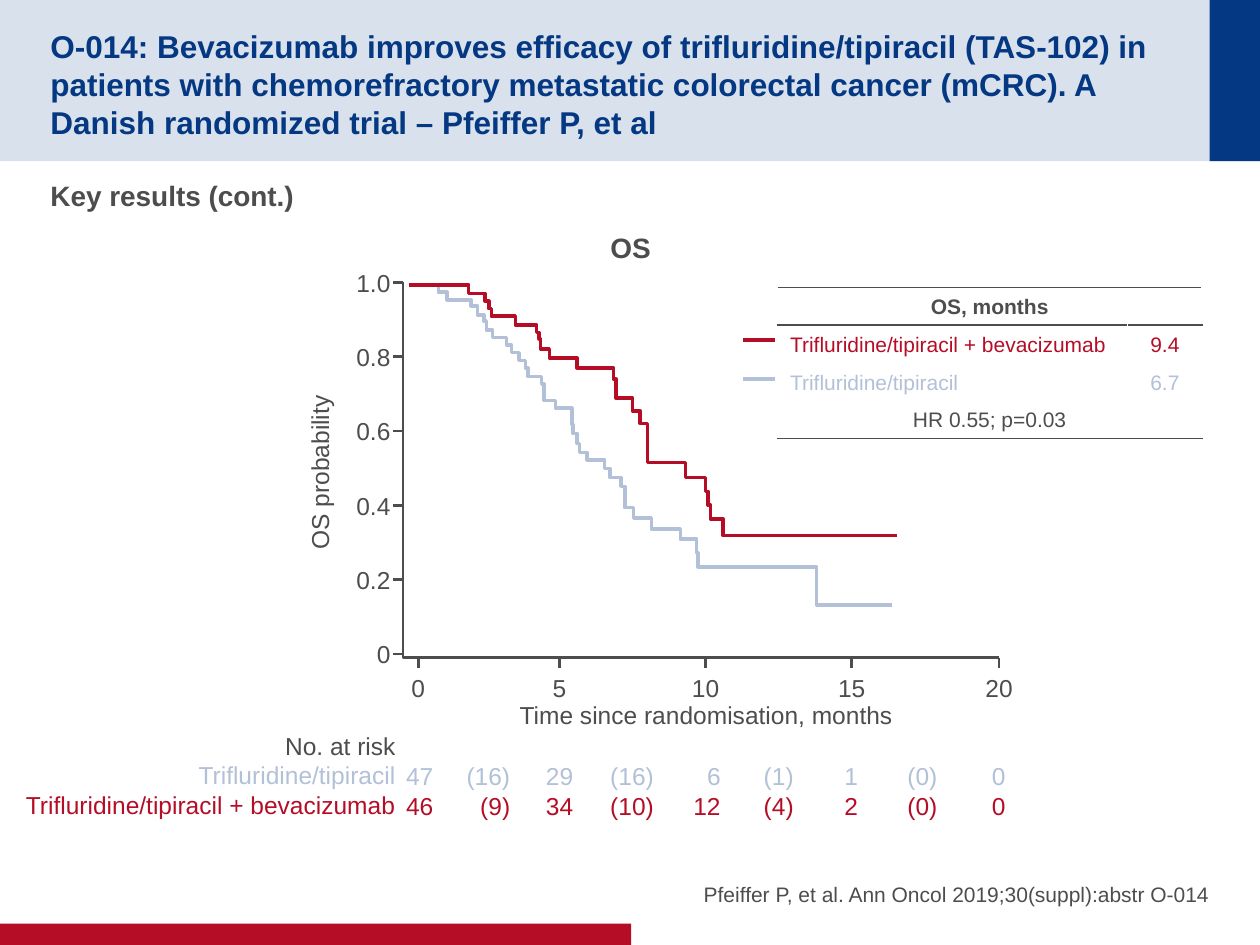
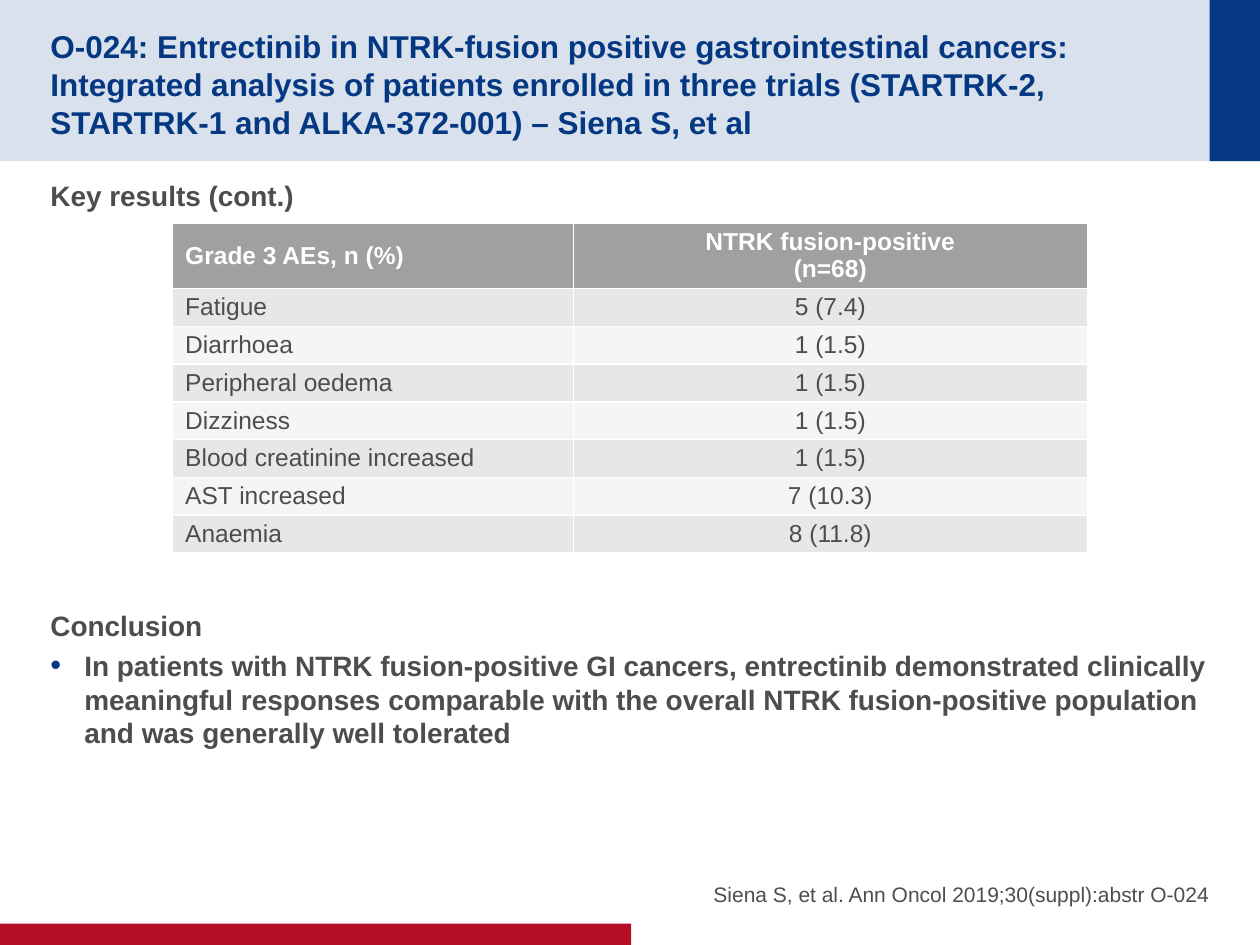
"""Build two oncology result slides: a survival plot and an adverse-event table."""
from pptx import Presentation, util as u
from pptx.dml.color import RGBColor
from pptx.enum import shapes, text
from pptx.oxml.xmlchemy import OxmlElement

NAVY = RGBColor(0x04, 0x38, 0x82)
PALE_NAVY = RGBColor(0xD9, 0xE1, 0xEC)
RED = RGBColor(0xB6, 0x0D, 0x27)
STEEL = RGBColor(0xB2, 0xC0, 0xD8)
INK = RGBColor(0x4D, 0x4D, 0x4D)
WHITE = RGBColor(0xFF, 0xFF, 0xFF)
GREY = RGBColor(0xA0, 0xA0, 0xA0)
GREY_DARK_ROW = RGBColor(0xE7, 0xE7, 0xE7)
GREY_LIGHT_ROW = RGBColor(0xF5, 0xF5, 0xF5)
FONT = "Arial"
LEFT, CENTER, RIGHT = text.PP_ALIGN.LEFT, text.PP_ALIGN.CENTER, text.PP_ALIGN.RIGHT
TOP, MIDDLE, BOTTOM = text.MSO_ANCHOR.TOP, text.MSO_ANCHOR.MIDDLE, text.MSO_ANCHOR.BOTTOM

WIDTH, HEIGHT = 10, 7.5
BANDS = [
    (0, 0, WIDTH, 1.28, PALE_NAVY),
    (9.6, 0, 0.4, 1.28, NAVY),
    (0, 7.33, 5.01, 0.17, RED),
]

SURVIVAL = {
    "title": "O-014: Bevacizumab improves efficacy of trifluridine/tipiracil (TAS-102) in patients "
             "with chemorefractory metastatic colorectal cancer (mCRC). A Danish randomized trial "
             "– Pfeiffer P, et al",
    "body": [("Key results (cont.)", 0, False)],
    "citation": "Pfeiffer P, et al. Ann Oncol 2019;30(suppl):abstr O-014",
}
ADVERSE_EVENTS = {
    "title": "O-024: Entrectinib in NTRK-fusion positive gastrointestinal cancers: Integrated "
             "analysis of patients enrolled in three trials (STARTRK-2, STARTRK-1 and "
             "ALKA-372-001) – Siena S, et al",
    "body": [
        ("Key results (cont.)", 0, False),
        ("Conclusion", 222, False),
        ("In patients with NTRK fusion-positive GI cancers, entrectinib demonstrated clinically "
         "meaningful responses comparable with the overall NTRK fusion-positive population and "
         "was generally well tolerated", 0, True),
    ],
    "citation": "Siena S, et al. Ann Oncol 2019;30(suppl):abstr O-024",
}

COMBINATION, SINGLE = "Trifluridine/tipiracil + bevacizumab", "Trifluridine/tipiracil"
PROBABILITIES = ["1.0", "0.8", "0.6", "0.4", "0.2", "0"]
PROBABILITY_TOP, PROBABILITY_STEP = 2.24, 0.59
MONTHS = [("0", 3.32), ("5", 4.44), ("10", 5.6), ("15", 6.76), ("20", 7.93)]
AXIS_LEFT, AXIS_BOTTOM, AXIS_RIGHT, TICK = 3.2, 5.22, 7.93, 0.08
AT_RISK = [
    (3.44, "47", "46"), (4.05, "(16)", "(9)"), (4.55, "29", "34"),
    (5.19, "(16)", "(10)"), (5.72, "6", "12"), (6.3, "(1)", "(4)"),
    (6.81, "1", "2"), (7.44, "(0)", "(0)"), (7.98, "0", "0"),
]

CURVE_START = (3.25, 2.26)
SINGLE_DROPS = [
    (3.48, 2.32), (3.55, 2.38), (3.74, 2.43), (3.79, 2.5), (3.84, 2.55), (3.86, 2.62),
    (3.91, 2.68), (4.02, 2.74), (4.06, 2.8), (4.12, 2.86), (4.17, 2.92), (4.19, 2.99),
    (4.3, 3.05), (4.32, 3.18), (4.41, 3.24), (4.54, 3.37), (4.55, 3.44), (4.58, 3.52),
    (4.6, 3.59), (4.66, 3.65), (4.8, 3.72), (4.84, 3.79), (4.93, 3.86), (4.96, 4.03),
    (5.03, 4.11), (5.17, 4.2), (5.4, 4.28), (5.53, 4.39), (5.54, 4.5), (6.48, 4.8),
]
COMBINATION_DROPS = [
    (3.72, 2.33), (3.85, 2.39), (3.88, 2.45), (3.9, 2.51), (4.09, 2.58), (4.26, 2.64),
    (4.28, 2.69), (4.29, 2.77), (4.36, 2.84), (4.58, 2.92), (4.87, 3.01), (4.89, 3.16),
    (5.02, 3.26), (5.08, 3.36), (5.14, 3.67), (5.44, 3.79), (5.6, 3.9), (5.62, 4.01),
    (5.64, 4.12), (5.74, 4.25),
]
CURVES = [(SINGLE_DROPS, 7.08, STEEL), (COMBINATION_DROPS, 7.12, RED)]
LEGEND = [(2.7, RED), (3.01, STEEL)]

MEDIANS = [
    (["OS, months"], INK, True),
    ([COMBINATION, "9.4"], RED, False),
    ([SINGLE, "6.7"], STEEL, False),
    (["HR 0.55; p=0.03"], INK, False),
]
MEDIAN_RULES = {0, 1, 4}

EVENTS = [
    ("Grade 3 AEs, n (%)", "NTRK fusion-positive\n(n=68)"),
    ("Fatigue", "5 (7.4)"),
    ("Diarrhoea", "1 (1.5)"),
    ("Peripheral oedema", "1 (1.5)"),
    ("Dizziness", "1 (1.5)"),
    ("Blood creatinine increased", "1 (1.5)"),
    ("AST increased", "7 (10.3)"),
    ("Anaemia", "8 (11.8)"),
]


def inches(*lengths):
    return [u.Inches(length) for length in lengths]


def style(para, size, color, bold=False, align=LEFT, pitch=1.2):
    para.alignment = align
    para.line_spacing = u.Pt(round(size * pitch, 1))
    para.space_before = u.Pt(0)
    for span in para.runs:
        span.font.name, span.font.size, span.font.bold = FONT, u.Pt(size), bold
        span.font.color.rgb = color


def set_bullet(para, shown):
    props = para._p.get_or_add_pPr()
    props.set("marL", str(u.Inches(0.27 if shown else 0)))
    props.set("indent", str(u.Inches(-0.27 if shown else 0)))
    if not shown:
        props.append(OxmlElement("a:buNone"))
        return
    tint = OxmlElement("a:buClr")
    tint.append(OxmlElement("a:srgbClr"))
    tint[0].set("val", str(NAVY))
    props.append(tint)
    for tag, key, value in [("a:buSzPct", "val", "110000"), ("a:buFont", "typeface", FONT),
                            ("a:buChar", "char", "•")]:
        part = OxmlElement(tag)
        part.set(key, value)
        props.append(part)


def set_frame(frame, anchor, margins=(0, 0, 0, 0), wrap=True):
    frame.word_wrap, frame.auto_size = wrap, text.MSO_AUTO_SIZE.NONE
    frame.vertical_anchor = anchor
    (frame.margin_left, frame.margin_top,
     frame.margin_right, frame.margin_bottom) = inches(*margins)


def fill_placeholder(box, place, content, anchor, margins):
    box.left, box.top, box.width, box.height = inches(*place)
    box.text_frame.text = content
    set_frame(box.text_frame, anchor, margins)
    return box.text_frame.paragraphs


def add_page(deck, content):
    page = deck.slides.add_slide(deck.slide_layouts[3])
    title, body, citation = page.placeholders
    paras = fill_placeholder(title, (0.4, 0.2, 9.01, 0.88), content["title"],
                             MIDDLE, (0, 0.05, 0, 0))
    style(paras[0], 18, NAVY, True)

    paras = fill_placeholder(body, (0.4, 1.37, 9.2, 5.19),
                             "\n".join(line for line, _, _ in content["body"]),
                             TOP, (0, 0.05, 0, 0.05))
    for para, (_, gap, bulleted) in zip(paras, content["body"]):
        style(para, 16, INK, True)
        para.space_before, para.space_after = u.Pt(gap), u.Pt(4)
        set_bullet(para, bulleted)

    paras = fill_placeholder(citation, (4.92, 6.67, 4.68, 0.53), content["citation"],
                             BOTTOM, (0, 0, 0, 0))
    style(paras[0], 12, INK, align=RIGHT)
    paras[0].space_after = u.Pt(4)
    set_bullet(paras[0], False)
    return page


def add_bands(deck, page):
    for position, (*place, color) in enumerate(BANDS):
        band = page.shapes.add_shape(shapes.MSO_SHAPE.RECTANGLE, *inches(*place))
        band.shadow.inherit = False
        band.fill.solid()
        band.fill.fore_color.rgb = color
        band.line.fill.background()
        deck.slide_master.shapes.element.insert(2 + position, band.element)


def add_label(page, place, lines, align=CENTER, size=14, bold=False, turn=0):
    box = page.shapes.add_textbox(*inches(*place))
    box.rotation = turn
    box.text_frame.text = "\n".join(line for line, _ in lines)
    set_frame(box.text_frame, MIDDLE, wrap=False)
    for para, (_, color) in zip(box.text_frame.paragraphs, lines):
        style(para, size, color, bold, align)


def add_line(page, start, end, color=INK, weight=1.5):
    line = page.shapes.add_connector(shapes.MSO_CONNECTOR.STRAIGHT, *inches(*start, *end))
    line.line.color.rgb, line.line.width = color, u.Pt(weight)
    line.element.spPr.append(OxmlElement("a:effectLst"))


def add_outline(page, points, color, weight):
    first, *rest = [inches(*point) for point in points]
    builder = page.shapes.build_freeform(*first)
    builder.add_line_segments(rest, close=False)
    outline = builder.convert_to_shape()
    outline.shadow.inherit = False
    outline.fill.background()
    outline.line.color.rgb, outline.line.width = color, u.Pt(weight)


def add_grid(page, place, columns, heights):
    frame = page.shapes.add_table(len(heights), len(columns),
                                  *inches(*place, sum(columns), sum(heights)))
    grid = frame.table
    grid.first_row = grid.horz_banding = False
    for column, width in zip(grid.columns, columns):
        column.width = u.Inches(width)
    for row, height in zip(grid.rows, heights):
        row.height = u.Inches(height)
    return grid


def fill_cell(cell, content, size, color, bold, align, pitch=1.2, margin=0.05):
    cell.vertical_anchor = MIDDLE
    cell.margin_top = cell.margin_bottom = u.Inches(margin)
    para = cell.text_frame.paragraphs[0]
    para.text = content
    style(para, size, color, bold, align, pitch)


def add_border(cell, side, color):
    border = OxmlElement(f"a:ln{side}")
    border.set("w", str(u.Pt(1)))
    paint = OxmlElement("a:solidFill")
    paint.append(OxmlElement("a:srgbClr"))
    paint[0].set("val", str(color))
    border.append(paint)
    cell._tc.get_or_add_tcPr().append(border)


def draw_axes(page):
    add_outline(page, [(AXIS_LEFT, PROBABILITY_TOP), (AXIS_LEFT, AXIS_BOTTOM),
                       (AXIS_RIGHT, AXIS_BOTTOM)], INK, 1.5)
    for step, name in enumerate(PROBABILITIES):
        y = PROBABILITY_TOP + step * PROBABILITY_STEP
        add_line(page, (AXIS_LEFT - TICK, y), (AXIS_LEFT, y))
        add_label(page, (2.6, y - 0.12, 0.5, 0.24), [(name, INK)], RIGHT)
    for name, x in MONTHS:
        add_line(page, (x, AXIS_BOTTOM), (x, AXIS_BOTTOM + TICK))
        add_label(page, (x - 0.15, 5.34, 0.3, 0.24), [(name, INK)])
    add_label(page, (4.74, 1.78, 0.53, 0.37), [("OS", INK)], size=16, bold=True)
    add_label(page, (4.02, 5.55, 3.17, 0.24), [("Time since randomisation, months", INK)])
    add_label(page, (1.88, 3.59, 1.31, 0.32), [("OS probability", INK)], turn=270)


def draw_curves(page):
    for drops, end, color in CURVES:
        points = [CURVE_START]
        for x, y in drops:
            points += [(x, points[-1][1]), (x, y)]
        add_outline(page, points + [(end, points[-1][1])], color, 2)
    for y, color in LEGEND:
        add_line(page, (5.9, y), (6.15, y), color, 2)


def draw_at_risk(page):
    add_label(page, (0.19, 5.8, 2.95, 0.7),
              [("No. at risk", INK), (SINGLE, STEEL), (COMBINATION, RED)], RIGHT)
    for right, single, combination in AT_RISK:
        add_label(page, (right - 0.4, 6.04, 0.4, 0.47),
                  [(single, STEEL), (combination, RED)], RIGHT)


def draw_medians(page):
    grid = add_grid(page, (6.17, 2.28), [2.78, 0.59], [0.3] * len(MEDIANS))
    for row, (values, color, bold) in enumerate(MEDIANS):
        if len(values) == 1:
            grid.cell(row, 0).merge(grid.cell(row, 1))
        for column, value in enumerate(values):
            align = LEFT if len(values) == 2 and column == 0 else CENTER
            fill_cell(grid.cell(row, column), value, 12, color, bold, align)
        for column in range(2):
            cell = grid.cell(row, column)
            for side, edge in (("T", row), ("B", row + 1)):
                add_border(cell, side, INK if edge in MEDIAN_RULES else WHITE)
            cell.fill.background()


def draw_events(page):
    grid = add_grid(page, (1.37, 1.77), [3.18, 4.08], [0.52] + [0.3] * (len(EVENTS) - 1))
    for row, values in enumerate(EVENTS):
        header = row == 0
        shade = GREY if header else GREY_DARK_ROW if row % 2 else GREY_LIGHT_ROW
        for column, value in enumerate(values):
            cell = grid.cell(row, column)
            fill_cell(cell, value, 14, WHITE if header else INK, header,
                      CENTER if column else LEFT, pitch=1.11, margin=0.04)
            for side in "TB":
                add_border(cell, side, WHITE)
            cell.fill.solid()
            cell.fill.fore_color.rgb = shade


def main():
    deck = Presentation()
    deck.slide_width, deck.slide_height = inches(WIDTH, HEIGHT)
    survival_page = add_page(deck, SURVIVAL)
    add_bands(deck, survival_page)
    draw_axes(survival_page)
    draw_curves(survival_page)
    draw_at_risk(survival_page)
    draw_medians(survival_page)
    draw_events(add_page(deck, ADVERSE_EVENTS))
    deck.save("out.pptx")


if __name__ == "__main__":
    main()
